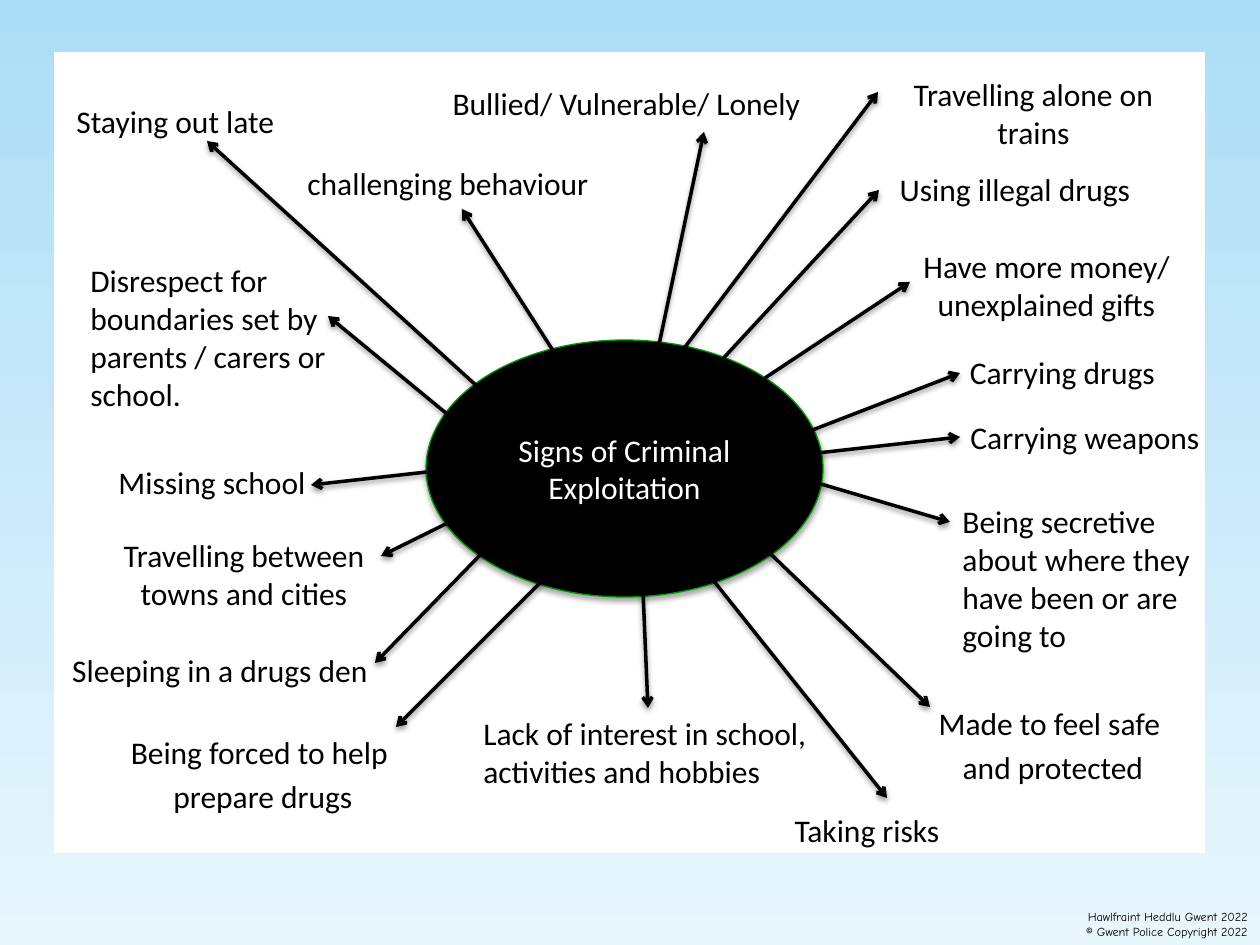
"""Build a one-slide spider diagram of the signs of criminal exploitation."""
import lxml.etree
import pptx
import pptx.dml.color
import pptx.enum.shapes
import pptx.enum.text
import pptx.oxml.ns
import pptx.util

PAGE = (1260, 945)
PANEL = (54, 52, 1151, 801)
HUB = ("Signs of Criminal Exploitation", (426, 340, 397, 257))
CREDIT = (["Hawlfraint Heddlu Gwent 2022", "© Gwent Police Copyright 2022"], (999, 892, 261, 53))
SIGNS = [
    (["Staying out late"], "left", (64, 96, 231, 50), (489, 397, 207, 141)),
    (["challenging behaviour"], "left", (295, 158, 336, 50), (561, 363, 462, 209)),
    (["Bullied/ Vulnerable/ Lonely"], "center", (430, 78, 393, 50), (659, 345, 704, 132)),
    (["Travelling alone on trains"], "center", (871, 69, 325, 89), (673, 363, 878, 92)),
    (["Using illegal drugs"], "center", (852, 164, 326, 50), (719, 363, 879, 190)),
    (["Have more money/ unexplained gifts"], "center", (873, 241, 347, 89), (765, 378, 910, 282)),
    (["Carrying drugs "], "center", (903, 347, 326, 50), (784, 441, 960, 373)),
    (["Carrying weapons"], "center", (922, 412, 326, 50), (782, 457, 960, 437)),
    (["Being secretive about where they have been or are going to"], "left",
     (950, 496, 261, 165), (804, 479, 950, 522)),
    (["Made to feel safe ", "and protected"], "center", (890, 698, 326, 97), (753, 537, 930, 707)),
    (["Taking risks"], "center", (704, 805, 326, 50), (709, 575, 887, 798)),
    (["Lack of interest in school, activities and hobbies"], "left",
     (471, 708, 352, 89), (643, 591, 648, 708)),
    (["Being forced to help ", "prepare drugs"], "center", (100, 727, 326, 97), (543, 580, 396, 727)),
    (["Sleeping in a drugs den"], "center", (33, 645, 374, 50), (489, 546, 375, 663)),
    (["Travelling between towns and cities"], "center", (81, 530, 326, 89), (476, 509, 381, 556)),
    (["Missing school"], "center", (49, 457, 326, 50), (445, 470, 311, 485)),
    (["Disrespect for boundaries set by parents / carers or school."], "left",
     (78, 255, 267, 165), (475, 437, 328, 316)),
]
THEME = {
    "sky": ("ACDDF6", "E8F6FD"), "panel": "FFFFFF", "ink": "000000", "hub_text": "FFFFFF",
    "hub_line": "009600", "hub_width": 0.75, "arrow_width": 2, "gap": 3.6,
    "body": {"name": "Calibri", "size": pptx.util.Pt(18)},
    "credit": {"name": "Comic Neue", "size": pptx.util.Pt(7)},
    "hub_shadow": (35, 3.1, 1.8), "arrow_shadow": (38, 3.1, 1.6),
}
ALIGN = {"left": pptx.enum.text.PP_ALIGN.LEFT, "center": pptx.enum.text.PP_ALIGN.CENTER,
         "right": pptx.enum.text.PP_ALIGN.RIGHT}
ANCHOR = pptx.enum.text.MSO_ANCHOR
SHAPE = pptx.enum.shapes.MSO_SHAPE
EMU_PER_PX = 914400 / 126


def emu(lengths):
    return [round(length * EMU_PER_PX) for length in lengths]


def color(code):
    return pptx.dml.color.RGBColor.from_string(code)


def add_node(parent, tag, **values):
    return lxml.etree.SubElement(parent, pptx.oxml.ns.qn(tag), values)


def cast_shadow(item, alpha, blur, distance):
    effects = add_node(item._element.spPr, "a:effectLst")
    shadow = add_node(effects, "a:outerShdw", blurRad=str(pptx.util.Pt(blur)),
                      dist=str(pptx.util.Pt(distance)), dir="5400000", rotWithShape="0")
    tint = add_node(shadow, "a:srgbClr", val=THEME["ink"])
    add_node(tint, "a:alpha", val=str(alpha * 1000))


def write(box, lines, align, font, ink, gap=0, anchor=ANCHOR.TOP):
    frame = box.text_frame
    frame.word_wrap = True
    frame.vertical_anchor = anchor
    for index, line in enumerate(lines):
        para = frame.add_paragraph() if index else frame.paragraphs[0]
        para.alignment = ALIGN[align]
        if index and gap:
            para.space_before = pptx.util.Pt(gap)
        span = para.add_run()
        span.text = line
        for name, value in font.items():
            setattr(span.font, name, value)
        span.font.color.rgb = color(ink)


def add_solid(page, kind, place, fill):
    shape = page.shapes.add_shape(kind, *emu(place))
    shape.fill.solid()
    shape.fill.fore_color.rgb = color(fill)
    return shape


def add_background(page):
    fill = page.background.fill
    fill.gradient()
    fill.gradient_angle = 270
    for position, (stop, code) in enumerate(zip(fill.gradient_stops, THEME["sky"])):
        stop.position = position
        stop.color.rgb = color(code)


def add_hub(page):
    text, place = HUB
    hub = add_solid(page, SHAPE.OVAL, place, THEME["ink"])
    hub.line.color.rgb = color(THEME["hub_line"])
    hub.line.width = pptx.util.Pt(THEME["hub_width"])
    cast_shadow(hub, *THEME["hub_shadow"])
    write(hub, [text], "center", THEME["body"], THEME["hub_text"], anchor=ANCHOR.MIDDLE)


def add_arrow(page, ends):
    arrow = page.shapes.add_connector(pptx.enum.shapes.MSO_CONNECTOR.STRAIGHT, *emu(ends))
    arrow.line.color.rgb = color(THEME["ink"])
    arrow.line.width = pptx.util.Pt(THEME["arrow_width"])
    add_node(arrow.line._get_or_add_ln(), "a:tailEnd", type="arrow")
    cast_shadow(arrow, *THEME["arrow_shadow"])


def main():
    deck = pptx.Presentation()
    deck.slide_width, deck.slide_height = emu(PAGE)
    page = deck.slides.add_slide(deck.slide_layouts[6])
    add_background(page)
    panel = add_solid(page, SHAPE.RECTANGLE, PANEL, THEME["panel"])
    panel.line.fill.background()
    panel.shadow.inherit = False
    lines, place = CREDIT
    credit = page.shapes.add_textbox(*emu(place))
    write(credit, lines, "right", THEME["credit"], THEME["ink"], anchor=ANCHOR.BOTTOM)
    add_hub(page)
    for lines, align, place, ends in SIGNS:
        add_arrow(page, ends)
        label = page.shapes.add_textbox(*emu(place))
        write(label, lines, align, THEME["body"], THEME["ink"], THEME["gap"])
    deck.save("out.pptx")


if __name__ == "__main__":
    main()
